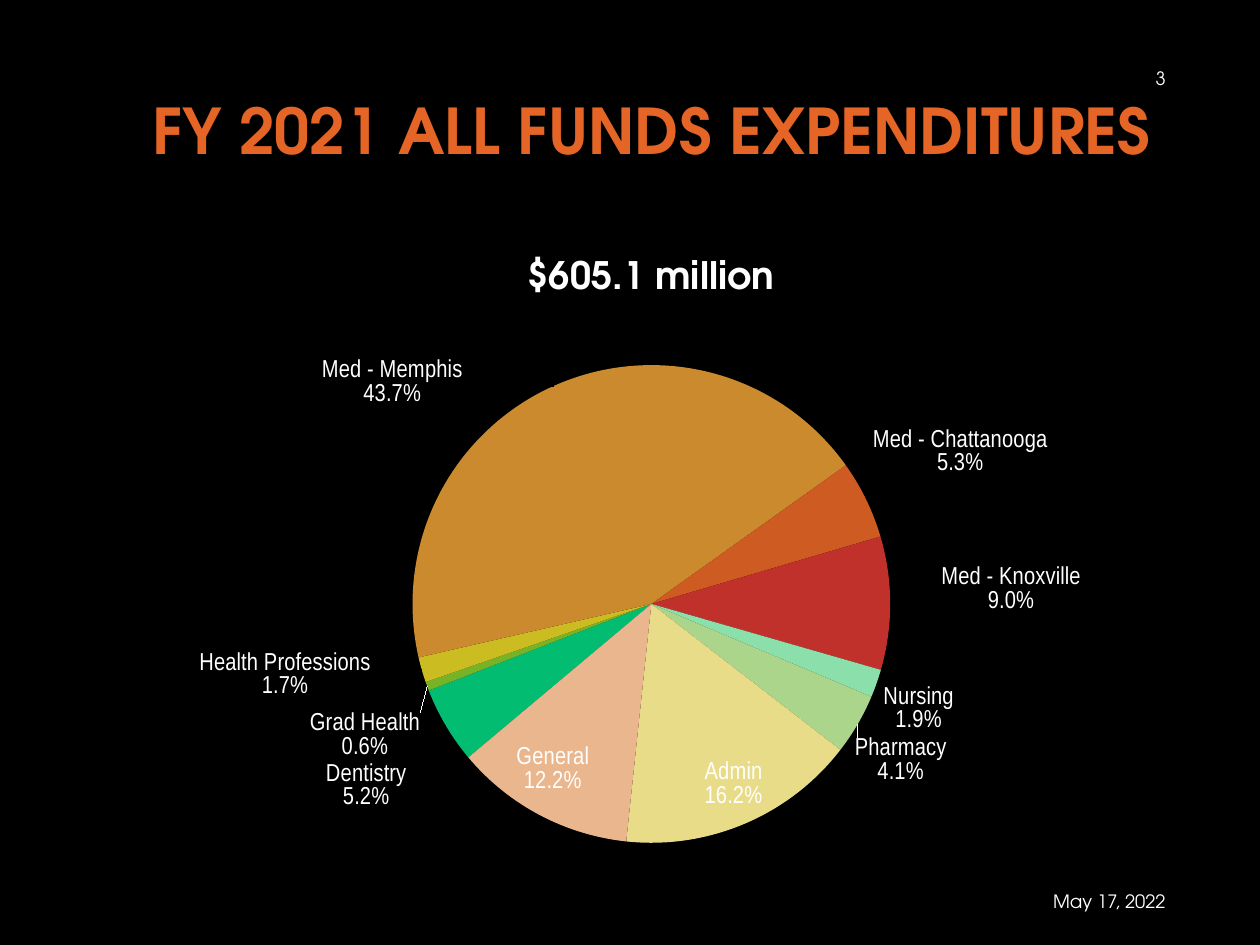
"""Build the FY 2021 all funds expenditures slide with its pie chart."""
import copy
import pptx
import pptx.chart.data
import pptx.dml.color
import pptx.enum.chart
import pptx.enum.text
import pptx.oxml
import pptx.oxml.ns
import pptx.util
from pptx.util import Inches

RGB = pptx.dml.color.RGBColor.from_string
theme = {
    "back": "000000",
    "title": {"name": "TeX Gyre Adventor", "size": 36, "bold": True, "color": "E56526"},
    "total": {"name": "TeX Gyre Adventor", "size": 21.6, "bold": True, "color": "FFFFFF"},
    "chart": {"name": "TeX Gyre Adventor", "size": 18, "color": "FFFFFF"},
    "label": {"name": "Arial Narrow", "size": 14, "bold": False, "color": "FFFFFF"},
    "note": {"name": "TeX Gyre Adventor", "size": 10.5, "color": "FFFFFF"},
}
units = [
    ("Dentistry", 5.2, "01BC71", (-0.03, 0.05)),
    ("Grad Health", 0.6, "77B326", None),
    ("Health Professions", 1.7, "CBBC22", (-0.04, -0.03)),
    ("Med - Memphis", 43.7, "CB8A2D", (-0.08, 0.04)),
    ("Med - Chattanooga", 5.3, "CE5B22", (0, -0.03)),
    ("Med - Knoxville", 9, "C1312C", (0.04, -0.02)),
    ("Nursing", 1.9, "8ADFAB", None),
    ("Pharmacy", 4.1, "AAD58B", None),
    ("Admin", 16.2, "E8DC88", None),
    ("General", 12.2, "E9B68D", None),
]


def style(font, look):
    for key, val in look.items():
        if key == "color":
            font.color.rgb = RGB(val)
        else:
            setattr(font, key, pptx.util.Pt(val) if key == "size" else val)


def place(x, y, w=None, h=None):
    sizes = [("xMode", "edge"), ("yMode", "edge")] if w else []
    sizes += [("x", x), ("y", y)] + ([("w", w), ("h", h)] if w else [])
    kind = '<c:layoutTarget val="inner"/>' if w else ""
    parts = "".join(f'<c:{tag} val="{val}"/>' for tag, val in sizes)
    return pptx.oxml.parse_xml(
        f'<c:layout {pptx.oxml.ns.nsdecls("c")}><c:manualLayout>{kind}{parts}'
        "</c:manualLayout></c:layout>")


deck = pptx.Presentation()
deck.slide_width, deck.slide_height = Inches(10), Inches(7.5)
slide = deck.slides.add_slide(deck.slide_layouts[5])
slide.background.fill.solid()
slide.background.fill.fore_color.rgb = RGB(theme["back"])

title = slide.shapes.title
data = pptx.chart.data.CategoryChartData()
data.categories = [unit[0] for unit in units]
data.add_series("Series 1", [unit[1] for unit in units])
chart = slide.shapes.add_chart(
    pptx.enum.chart.XL_CHART_TYPE.PIE,
    Inches(0.83), Inches(1.83), Inches(8.68), Inches(5.34), data).chart
date = slide.shapes.add_textbox(Inches(7.01), Inches(6.95), Inches(2.34), Inches(0.4))
page = slide.shapes.add_textbox(Inches(7.19), Inches(0.42), Inches(2.16), Inches(0.4))

title.left, title.top = Inches(0.75), Inches(0.36)
title.width, title.height = Inches(8.48), Inches(1.41)
for box, text, look in [
    (title, "FY 2021 ALL FUNDS EXPENDITURES", "title"),
    (date, "May 17, 2022", "note"),
    (page, "3", "note"),
]:
    frame = box.text_frame
    frame.text = text
    frame.word_wrap = True
    frame.vertical_anchor = pptx.enum.text.MSO_ANCHOR.MIDDLE
    para = frame.paragraphs[0]
    para.alignment = pptx.enum.text.PP_ALIGN.RIGHT
    style(para.runs[0].font, theme[look])
title.text_frame.paragraphs[0].line_spacing = 0.9

style(chart.font, theme["chart"])
chart.has_legend = False
chart.has_title = True
chart.chart_title.include_in_layout = False
head = chart.chart_title.text_frame
head.text = "$605.1 million"
style(head.paragraphs[0].runs[0].font, theme["total"])

plot = chart.plots[0]
plot.vary_by_categories = True
pie = plot.series[0]
for num, unit in enumerate(units):
    fill = pie.points[num].format.fill
    fill.solid()
    fill.fore_color.rgb = RGB(unit[2])

labels = pie.data_labels
for key, val in {
    "number_format": "0.0%",
    "number_format_is_linked": False,
    "show_category_name": True,
    "show_percentage": True,
    "show_value": False,
    "position": pptx.enum.chart.XL_LABEL_POSITION.BEST_FIT,
}.items():
    setattr(labels, key, val)
style(labels.font, theme["label"])

qn = pptx.oxml.ns.qn
tree = pie._element.find(qn("c:dLbls"))
line = pptx.oxml.parse_xml(f'<c:separator {pptx.oxml.ns.nsdecls("c")}>\n</c:separator>')
lead = tree.find(qn("c:showLeaderLines"))
if lead is not None:
    tree.remove(lead)
tree.append(line)
shared = list(tree)
spot = 0
for num, unit in enumerate(units):
    if unit[3]:
        label = pptx.oxml.parse_xml(
            f'<c:dLbl {pptx.oxml.ns.nsdecls("c")}><c:idx val="{num}"/></c:dLbl>')
        label.append(place(*unit[3]))
        label.extend(copy.deepcopy(shared))
        tree.insert(spot, label)
        spot += 1
tree.append(pptx.oxml.parse_xml(
    f'<c:showLeaderLines {pptx.oxml.ns.nsdecls("c")} val="1"/>'))

shell = plot._element
shell.append(pptx.oxml.parse_xml(
    f'<c:firstSliceAng {pptx.oxml.ns.nsdecls("c")} val="230"/>'))
area = shell.getparent()
old = area.find(qn("c:layout"))
if old is not None:
    area.remove(old)
area.insert(0, place(0.28, 0.2, 0.44, 0.71))

deck.save("out.pptx")
